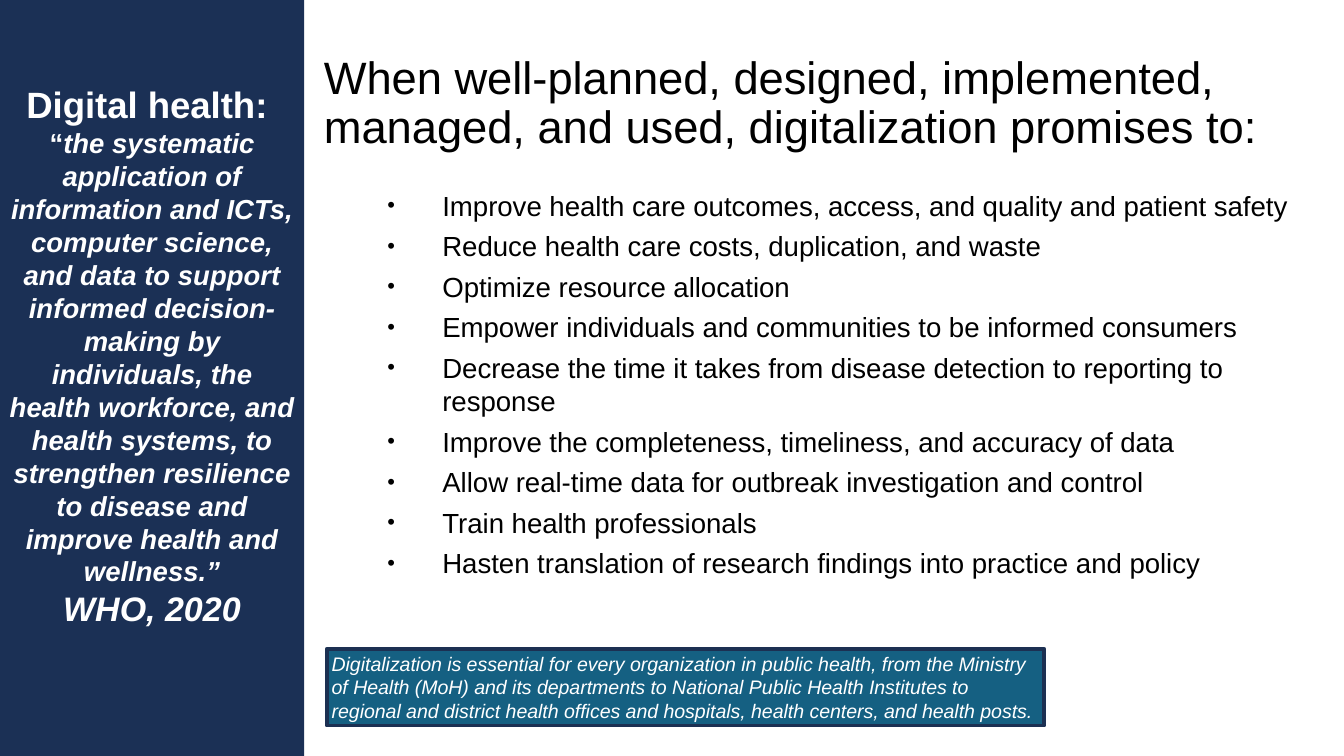
from lxml import etree
from pptx import Presentation
from pptx.dml.color import RGBColor
from pptx.enum.shapes import MSO_SHAPE
from pptx.enum.text import MSO_ANCHOR, MSO_AUTO_SIZE, PP_ALIGN
from pptx.oxml.ns import qn
from pptx.util import Pt

RECTANGLE = MSO_SHAPE.RECTANGLE
TOP, MIDDLE = MSO_ANCHOR.TOP, MSO_ANCHOR.MIDDLE
LEFT, CENTER = PP_ALIGN.LEFT, PP_ALIGN.CENTER
NO_AUTOFIT = MSO_AUTO_SIZE.NONE

SLIDE_WIDTH, SLIDE_HEIGHT = 720, 405
SIDEBAR_WIDTH = 163
NAVY, TEAL, NOTE_BORDER = "1B3055", "156082", "1C3052"
WHITE, BLACK = "FFFFFF", "000000"

TITLE = "When well-planned, designed, implemented, managed, and used, digitalization promises to:"
DEFINITION = (
    "the systematic application of information and ICTs, computer science, "
    "and data to support informed decision-making by individuals, the health "
    "workforce, and health systems, to strengthen resilience to disease and "
    "improve health and wellness.”"
)
PROMISES = [
    "Improve health care outcomes, access, and quality and patient safety",
    "Reduce health care costs, duplication, and waste",
    "Optimize resource allocation",
    "Empower individuals and communities to be informed consumers",
    "Decrease the time it takes from disease detection to reporting to response",
    "Improve the completeness, timeliness, and accuracy of data",
    "Allow real-time data for outbreak investigation and control",
    "Train health professionals",
    "Hasten translation of research findings into practice and policy",
]
NOTE = (
    "Digitalization is essential for every organization in public health, from the "
    "Ministry of Health (MoH) and its departments to National Public Health "
    "Institutes to regional and district health offices and hospitals, health "
    "centers, and health posts."
)


def color(hex_string):
    return RGBColor.from_string(hex_string)


def set_values(target, values):
    for name, value in values.items():
        setattr(target, name, value)


def place(shape, box):
    set_values(shape, dict(zip(("left", "top", "width", "height"), map(Pt, box))))


def format_frame(frame, horizontal, vertical, anchor=TOP):
    set_values(frame, {
        "margin_left": Pt(horizontal), "margin_right": Pt(horizontal),
        "margin_top": Pt(vertical), "margin_bottom": Pt(vertical),
        "vertical_anchor": anchor, "word_wrap": True, "auto_size": NO_AUTOFIT,
    })


def add_run(paragraph, text, size, hex_string, **styles):
    run = paragraph.add_run()
    run.text = text
    set_values(run.font, {"name": "Arial", "size": Pt(size), **styles})
    run.font.color.rgb = color(hex_string)


def add_panel(slide, box, fill, border=None):
    panel = slide.shapes.add_shape(RECTANGLE, *map(Pt, box))
    panel.shadow.inherit = False
    panel.fill.solid()
    panel.fill.fore_color.rgb = color(fill)
    if border:
        panel.line.color.rgb = color(border)
        panel.line.width = Pt(2)
    else:
        panel.line.fill.background()
    return panel


def add_bullet(paragraph, indent, hanging):
    properties = paragraph._p.get_or_add_pPr()
    properties.set("marL", str(Pt(indent)))
    properties.set("indent", str(-Pt(hanging)))
    for tag, name, value in (("a:buSzPct", "val", "79000"),
                             ("a:buFont", "typeface", "Arial"),
                             ("a:buChar", "char", "•")):
        etree.SubElement(properties, qn(tag)).set(name, value)


def add_sidebar(slide, box):
    left, top, width, height = box
    add_panel(slide, box, NAVY)
    text_top = top + 41
    text_box = slide.shapes.add_textbox(
        *map(Pt, (left, text_top, width, height - text_top)))
    frame = text_box.text_frame
    format_frame(frame, 5, 3)
    lines = [
        [("Digital health: ", 19.6, False)],
        [("“", 14.7, False), (DEFINITION, 14.7, True)],
        [("WHO, 2020", 18.2, True)],
    ]
    for index, runs in enumerate(lines):
        paragraph = frame.add_paragraph() if index else frame.paragraphs[0]
        paragraph.alignment = CENTER
        for text, size, italic in runs:
            add_run(paragraph, text, size, WHITE, bold=True, italic=italic)


def fill_title(slide, box):
    title = slide.shapes.title
    place(title, box)
    format_frame(title.text_frame, 7.2, 3.6, MIDDLE)
    paragraph = title.text_frame.paragraphs[0]
    set_values(paragraph, {"alignment": LEFT, "line_spacing": 0.9})
    add_run(paragraph, TITLE, 24.3, BLACK)


def fill_promises(slide, box):
    body = slide.placeholders[1]
    place(body, box)
    frame = body.text_frame
    format_frame(frame, 5, 3)
    for index, promise in enumerate(PROMISES):
        paragraph = frame.add_paragraph() if index else frame.paragraphs[0]
        paragraph.space_before = Pt(4 if index else 0)
        add_bullet(paragraph, 36, 29.5)
        add_run(paragraph, promise, 14.8, BLACK)


def add_note(slide, box):
    frame = add_panel(slide, box, TEAL, NOTE_BORDER).text_frame
    format_frame(frame, 2.7, 1.35)
    paragraph = frame.paragraphs[0]
    paragraph.alignment = LEFT
    add_run(paragraph, NOTE, 10.5, WHITE, italic=True)


def main():
    presentation = Presentation()
    set_values(presentation, {"slide_width": Pt(SLIDE_WIDTH),
                              "slide_height": Pt(SLIDE_HEIGHT)})
    slide = presentation.slides.add_slide(presentation.slide_layouts[1])
    add_sidebar(slide, (0, 0, SIDEBAR_WIDTH, SLIDE_HEIGHT))
    fill_title(slide, (166.3, 24, 553.7, 64))
    fill_promises(slide, (196, 98, 524, 230))
    add_note(slide, (175, 347.7, 384.5, 41))
    presentation.save("out.pptx")


if __name__ == "__main__":
    main()
